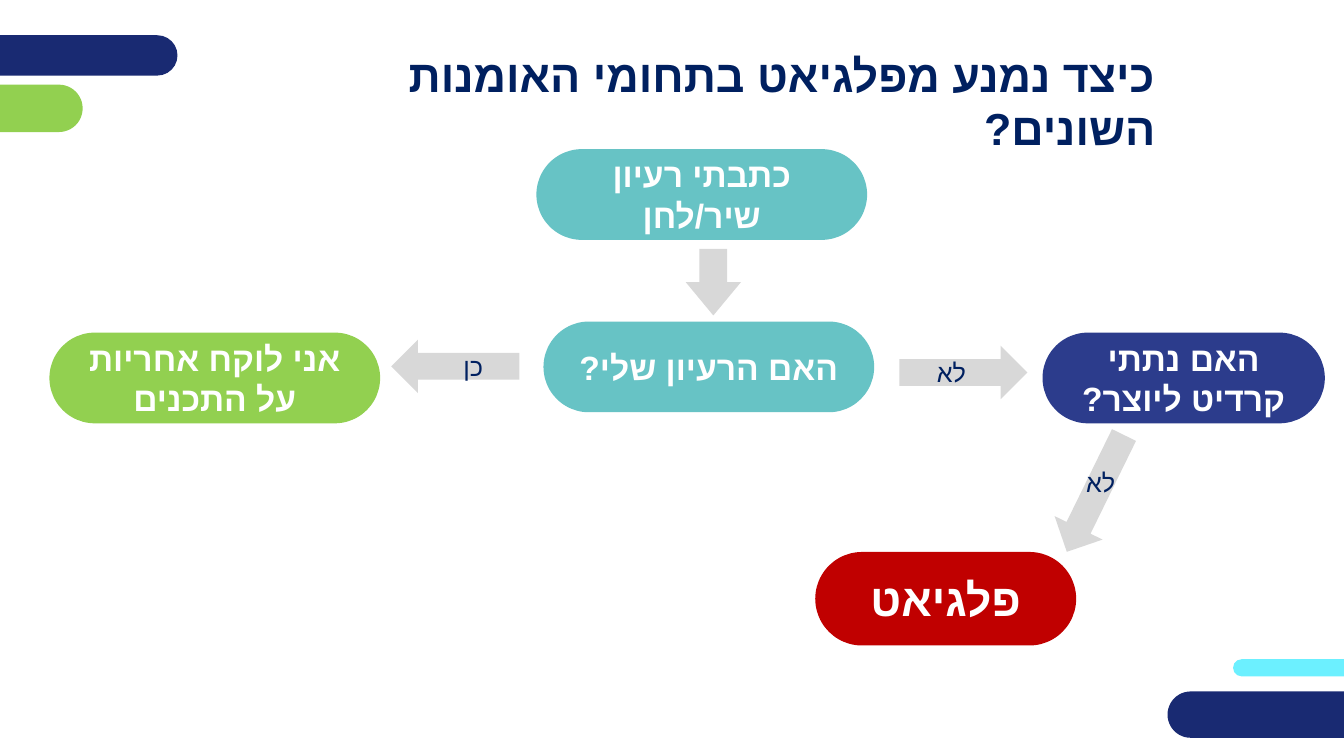
"""Build a Hebrew flowchart slide on preventing plagiarism in the arts."""
from lxml import etree
from pptx import Presentation
from pptx.dml.color import RGBColor
from pptx.enum import shapes, text
from pptx.oxml import ns
from pptx.util import Inches, Pt

NAVY, INK, GREEN, TEAL = "192A72", "002060", "92D050", "67C3C5"
CYAN, INDIGO, RED, GREY, WHITE = "6CF0FF", "2C3C8C", "C00000", "D8D8D8", "FFFFFF"
ROUND = shapes.MSO_SHAPE.ROUNDED_RECTANGLE
ARROW = shapes.MSO_SHAPE.DOWN_ARROW

deck = Presentation()
deck.slide_width, deck.slide_height = Inches(13.33), Inches(7.5)
page = deck.slides.add_slide(deck.slide_layouts[6])


def add_solid(preset, place, color, adjustments, rotation=0):
    shape = page.shapes.add_shape(preset, *map(Inches, place))
    shape.shadow.inherit = False
    shape.fill.solid()
    shape.fill.fore_color.rgb = RGBColor.from_string(color)
    shape.line.fill.background()
    for index, value in enumerate(adjustments):
        shape.adjustments[index] = value
    shape.rotation = rotation
    return shape


def write(shape, lines, size, color, bold, align):
    frame = shape.text_frame
    frame.word_wrap = True
    for index, line in enumerate(lines):
        para = frame.paragraphs[0] if index == 0 else frame.add_paragraph()
        para.alignment = align
        para._p.get_or_add_pPr().set("rtl", "1")
        span = para.add_run()
        span.text = line
        span.font.size, span.font.bold, span.font.name = Pt(size), bold, "Arial"
        span.font.color.rgb = RGBColor.from_string(color)
        span.font.language_id = 1037
        etree.SubElement(span.font._element, ns.qn("a:cs")).set("typeface", "Arial")


corner_bars = [
    ((12.23, 6.54, 1.74, 0.17), CYAN),
    ((-0.45, 0.84, 1.27, 0.47), GREEN),
    ((-0.53, 0.35, 2.29, 0.4), NAVY),
    ((11.58, 6.86, 2.4, 0.46), NAVY),
]
for place, color in corner_bars:
    add_solid(ROUND, place, color, [0.5])

arrows = [
    ((6.8, 2.47, 0.55, 0.66), 0.603, 0),
    ((4.25, 3, 0.53, 1.27), 0.5, 90),
    ((9.29, 3.06, 0.53, 1.27), 0.5, 270),
    ((10.6, 4.25, 0.53, 1.29), 0.5, 26.1),
]
for place, head, rotation in arrows:
    add_solid(ARROW, place, GREY, [0.5, head], rotation)

steps = [
    (5.32, 1.48, 3.28, TEAL, 24, ["כתבתי רעיון", "שיר/לחן"]),
    (5.39, 3.19, 3.28, TEAL, 24, ["האם הרעיון שלי?"]),
    (0.49, 3.3, 3.28, GREEN, 24, ["אני לוקח אחריות על התכנים"]),
    (10.34, 3.3, 2.8, INDIGO, 24, ["האם נתתי קרדיט ליוצר?"]),
    (8.1, 5.49, 2.56, RED, 32, ["פלגיאט"]),
]
for left, top, width, color, size, lines in steps:
    step = add_solid(ROUND, (left, top, width, 0.9), color, [0.5])
    write(step, lines, size, WHITE, True, text.PP_ALIGN.CENTER)
    if color == RED:
        step.line.color.rgb = RGBColor.from_string(RED)
        step.line.width = Pt(2)

labels = [
    ((2.49, 0.42, 9.07, 0.64), "כיצד נמנע מפלגיאט בתחומי האומנות השונים?", 32, True),
    ((4.07, 3.44, 0.82, 0.4), "כן", 18, False),
    ((9.12, 3.5, 0.56, 0.4), "לא", 18, False),
    ((10.6, 4.59, 0.56, 0.4), "לא", 18, False),
]
for place, words, size, bold in labels:
    box = page.shapes.add_textbox(*map(Inches, place))
    write(box, [words], size, INK, bold, text.PP_ALIGN.RIGHT)
    box.text_frame.auto_size = text.MSO_AUTO_SIZE.SHAPE_TO_FIT_TEXT

deck.save("out.pptx")
